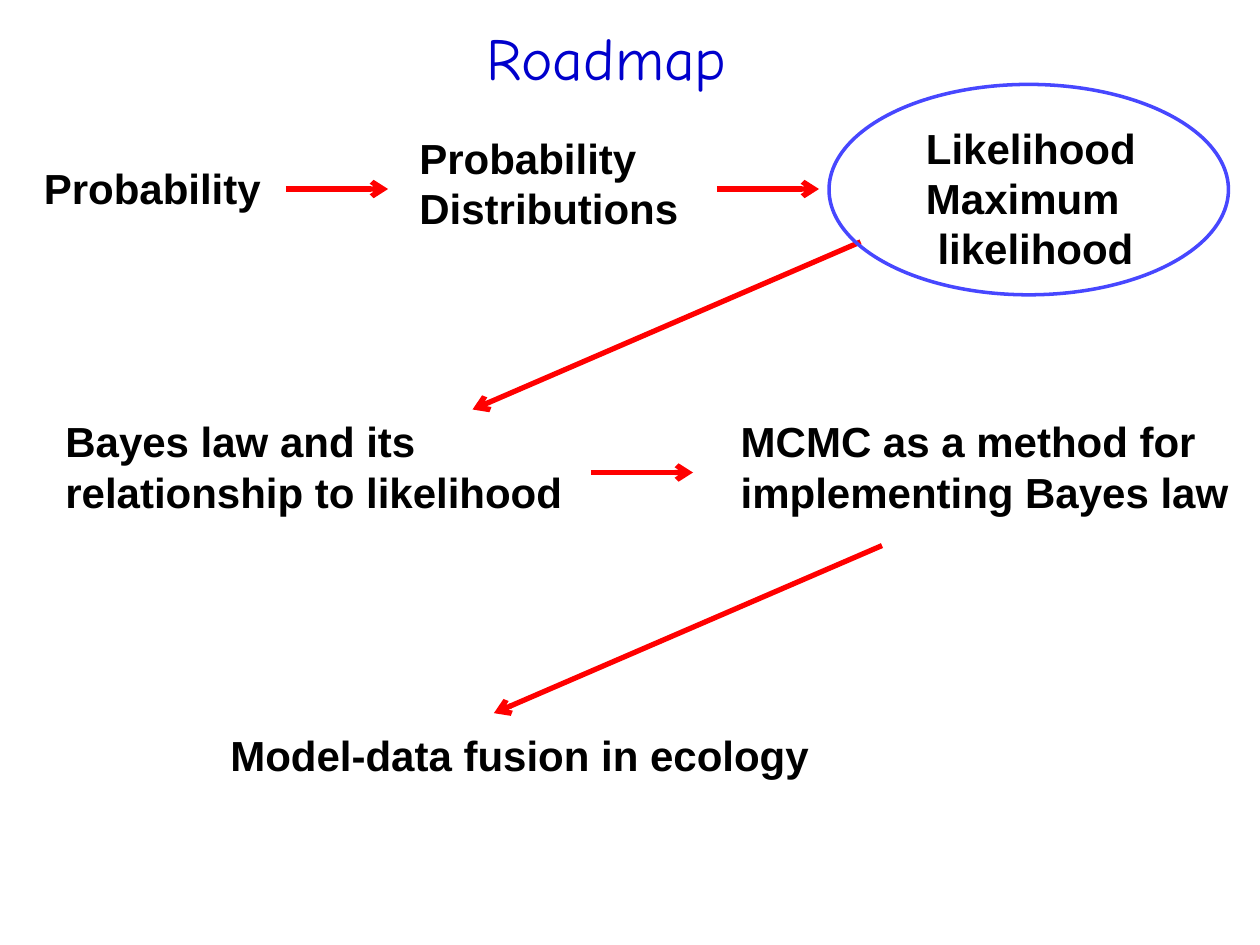
"""Build a one-slide course roadmap with labelled steps and arrows."""
from lxml.etree import SubElement
from pptx import Presentation
from pptx.dml.color import RGBColor
from pptx.enum.shapes import MSO_CONNECTOR as LINK, MSO_SHAPE as SHAPE
from pptx.enum.text import MSO_ANCHOR as ANCHOR, MSO_AUTO_SIZE as AUTO, PP_ALIGN as ALIGN
from pptx.oxml.ns import qn
from pptx.util import Inches, Pt

BLACK = RGBColor(0x00, 0x00, 0x00)
NAVY = RGBColor(0x00, 0x00, 0xCC)
BLUE = RGBColor(0x47, 0x47, 0xFF)
RED = RGBColor(0xFF, 0x00, 0x00)

TITLE = "Roadmap"
STEPS = [
    (0.25, 1.24, 1.94, ["Probability"]),
    (3.23, 1, 2.28, ["Probability", "Distributions"]),
    (7.25, 0.92, 1.88, ["Likelihood", "Maximum", " likelihood"]),
    (0.42, 3.25, 4.18, ["Bayes law and its", "relationship to likelihood"]),
    (5.78, 3.25, 4.11, ["MCMC as a method for", "implementing Bayes law"]),
    (1.73, 5.74, 4.83, ["Model-data fusion in ecology"]),
]
AHEAD = (0.81, 0)
BACK = (-3.08, 1.33)
ARROWS = [
    (2.27, 1.5, AHEAD),
    (5.69, 1.5, AHEAD),
    (6.83, 1.92, BACK),
    (4.69, 3.75, AHEAD),
    (7, 4.33, BACK),
]
FOCUS = (6.58, 0.67, 3.17, 1.67)
PAD, ROW = 0.11, 0.4


def style(para, name, size, color, bold):
    font = para.font
    font.name, font.size, font.bold = name, Pt(size), bold
    font.color.rgb = color


def add_title(slide):
    title = slide.shapes.title
    title.left, title.top, title.width, title.height = map(Inches, (1, 0, 7.63, 0.78))
    frame = title.text_frame
    frame.text = TITLE
    frame.vertical_anchor = ANCHOR.BOTTOM
    para = frame.paragraphs[0]
    para.alignment = ALIGN.CENTER
    style(para, "Comic Neue", 34, NAVY, False)


def add_step(slide, left, top, width, lines):
    size = map(Inches, (left, top, width, PAD + ROW * len(lines)))
    frame = slide.shapes.add_textbox(*size).text_frame
    frame.word_wrap = False
    frame.auto_size = AUTO.SHAPE_TO_FIT_TEXT
    frame.text = "\n".join(lines)
    for para in frame.paragraphs:
        style(para, "Arial", 24, BLACK, True)


def add_arrow(slide, x, y, move):
    ends = map(Inches, (x, y, x + move[0], y + move[1]))
    arrow = slide.shapes.add_connector(LINK.STRAIGHT, *ends)
    arrow.line.color.rgb = RED
    arrow.line.width = Pt(3)
    SubElement(arrow.line._get_or_add_ln(), qn("a:tailEnd"), type="arrow")
    SubElement(arrow._element.spPr, qn("a:effectLst"))


def add_focus(slide):
    ring = slide.shapes.add_shape(SHAPE.OVAL, *map(Inches, FOCUS))
    ring.shadow.inherit = False
    ring.fill.background()
    ring.line.color.rgb = BLUE
    ring.line.width = Pt(2)


def main():
    deck = Presentation()
    deck.slide_width, deck.slide_height = Inches(10), Inches(7.5)
    slide = deck.slides.add_slide(deck.slide_layouts[5])
    add_title(slide)
    for step in STEPS:
        add_step(slide, *step)
    for arrow in ARROWS:
        add_arrow(slide, *arrow)
    add_focus(slide)
    deck.save("out.pptx")


if __name__ == "__main__":
    main()
